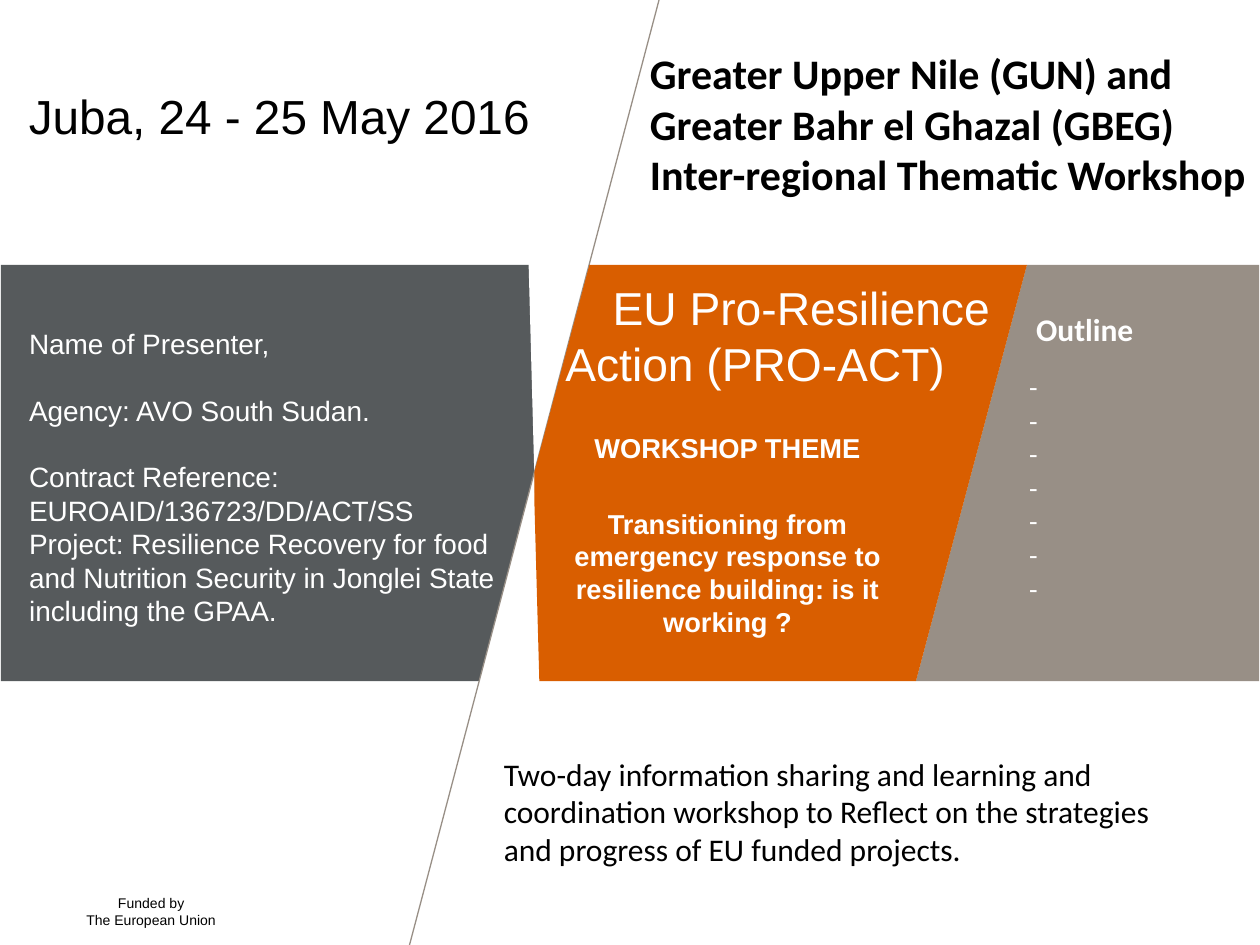
from pptx import Presentation
from pptx.dml.color import RGBColor
from pptx.enum.shapes import MSO_CONNECTOR, MSO_SHAPE
from pptx.enum.text import MSO_ANCHOR, MSO_AUTO_SIZE, PP_ALIGN
from pptx.oxml.ns import qn
from pptx.util import Pt
from lxml import etree

WHITE = RGBColor(0xFF, 0xFF, 0xFF)
BLACK = RGBColor(0, 0, 0)
SLATE = RGBColor(0x56, 0x5A, 0x5C)
ORANGE = RGBColor(0xD9, 0x5E, 0x00)
TAUPE = RGBColor(0x98, 0x8F, 0x86)

LEFT, CENTER = PP_ALIGN.LEFT, PP_ALIGN.CENTER
TOP, MIDDLE = MSO_ANCHOR.TOP, MSO_ANCHOR.MIDDLE
RECTANGLE = MSO_SHAPE.RECTANGLE
STRAIGHT = MSO_CONNECTOR.STRAIGHT
NO_AUTOFIT = MSO_AUTO_SIZE.NONE

# Slide size, the coloured band and the point where the slanted line crosses it
WIDTH, HEIGHT = 720, 540
BAND_TOP, BAND_BOTTOM = 151.4, 389.2
CROSS_X, CROSS_Y = 305.3, 270
LINE_TOP, LINE_BOTTOM = 376.6, 234


def paint(shape, color):
    shape.shadow.inherit = False
    shape.fill.solid()
    shape.fill.fore_color.rgb = color
    shape.line.fill.background()


def add_polygon(slide, points, color):
    (start_x, start_y), *others = [(Pt(x), Pt(y)) for x, y in points]
    builder = slide.shapes.build_freeform(start_x, start_y)
    builder.add_line_segments(others, close=True)
    paint(builder.convert_to_shape(), color)


def add_line(slide, start, end, color):
    line = slide.shapes.add_connector(STRAIGHT, *(Pt(v) for v in start + end))
    line.line.color.rgb = color
    line.line.width = Pt(0.75)
    etree.SubElement(line.element.spPr, qn("a:effectLst"))


def place(shape, left, top, width, height):
    shape.left, shape.top = Pt(left), Pt(top)
    shape.width, shape.height = Pt(width), Pt(height)


def write_text(shape, lines, size, color=BLACK, font="Arial", bold=False,
               align=LEFT, anchor=TOP, spacing=None, gaps=None, indent=0,
               inset_x=7.2, inset_top=3.6):
    """Write one paragraph a line; gaps maps a line index to its space before."""
    frame = shape.text_frame
    frame.auto_size = NO_AUTOFIT
    frame.word_wrap = True
    frame.vertical_anchor = anchor
    frame.margin_left = frame.margin_right = Pt(inset_x)
    frame.margin_top, frame.margin_bottom = Pt(inset_top), Pt(min(inset_top, 3.6))
    for index, line in enumerate(lines):
        paragraph = frame.add_paragraph() if index else frame.paragraphs[0]
        paragraph.alignment = align
        paragraph.space_before = Pt((gaps or {}).get(index, 0))
        if spacing:
            paragraph.line_spacing = Pt(spacing)
        if indent and index == 0:
            paragraph._p.get_or_add_pPr().set("indent", str(Pt(indent)))
        run = paragraph.add_run()
        run.text = line
        run.font.name, run.font.size = font, Pt(size)
        run.font.bold = bold
        run.font.color.rgb = color


def add_text(slide, box, lines, size, **text_format):
    shape = slide.shapes.add_textbox(*(Pt(value) for value in box))
    write_text(shape, lines, size, **text_format)
    return shape


def add_background(slide):
    # Dark panel, cut by a white double wedge along the slanted line
    panel = slide.shapes.add_shape(RECTANGLE, 0, 0, 0, 0)
    place(panel, 0.5, BAND_TOP, CROSS_X - 0.5, BAND_BOTTOM - BAND_TOP)
    paint(panel, SLATE)
    cross = (CROSS_X, CROSS_Y)
    add_polygon(slide, [(298, 0), cross, (LINE_BOTTOM, HEIGHT), (311.8, HEIGHT),
                        cross, (LINE_TOP, 0)], WHITE)
    add_line(slide, (LINE_TOP, 0), (LINE_BOTTOM, HEIGHT), TAUPE)

    # Outline panel and theme panel share one slanted edge
    shared_top, shared_bottom = (586.8, BAND_TOP), (523.4, BAND_BOTTOM)
    add_polygon(slide, [shared_bottom, (719.5, BAND_BOTTOM), (719.5, BAND_TOP),
                        shared_top], TAUPE)
    add_polygon(slide, [cross, (CROSS_X, 284.4), (308.2, BAND_BOTTOM),
                        shared_bottom, shared_top, (336.8, BAND_TOP)], ORANGE)


def add_presenter(slide):
    title = slide.shapes.title
    title.element.getparent().append(title.element)  # bring to the front
    place(title, 9.4, 149.8, 296, 217)
    write_text(title, ["Name of Presenter,", "Agency: AVO South Sudan.",
                       "Contract Reference: EUROAID/136723/DD/ACT/SS",
                       "Project: Resilience Recovery for food and Nutrition "
                       "Security in Jonglei State including the GPAA."],
               16, color=WHITE, spacing=19.1, gaps={1: 19.1, 2: 19.1},
               inset_top=36.7)


def main():
    presentation = Presentation()
    presentation.slide_width, presentation.slide_height = Pt(WIDTH), Pt(HEIGHT)
    slide = presentation.slides.add_slide(presentation.slide_layouts[5])

    add_background(slide)
    add_presenter(slide)

    # Heading: date and workshop name
    add_text(slide, (9.4, 13, 347, 106), ["Juba, 24 - 25 May 2016"], 27.3,
             anchor=MIDDLE)
    add_text(slide, (364.3, 23.8, 360, 94.3),
             ["Greater Upper Nile (GUN) and Greater Bahr el Ghazal (GBEG)",
              "Inter-regional Thematic Workshop"],
             24, font="Calibri", bold=True)

    # Theme panel
    add_text(slide, (316, 151.5, 279.4, 80), ["EU Pro-Resilience Action (PRO-ACT)"],
             26.4, color=WHITE, anchor=MIDDLE, spacing=32, indent=27)
    add_text(slide, (307.4, 231, 216.7, 160.6),
             ["WORKSHOP THEME", "Transitioning from emergency response to "
              "resilience building: is it working ?"],
             15.6, color=WHITE, bold=True, align=CENTER, spacing=18.7,
             gaps={1: 24.7}, inset_top=15.2)

    # Outline panel
    outline_format = dict(color=WHITE, font="Calibri")
    add_text(slide, (581, 173.5, 139, 30), ["Outline"], 18, bold=True, indent=4,
             **outline_format)
    add_text(slide, (581, 207.7, 139, 143), ["-"] * 7, 16, spacing=19.2,
             **outline_format)

    # Foot: purpose and funder
    add_text(slide, (280.8, 427.7, 408.2, 94.3),
             ["Two-day information sharing and learning and coordination workshop "
              "to Reflect on the strategies and progress of EU funded projects."],
             18, font="Calibri")
    add_text(slide, (37.4, 511.2, 98, 26), ["Funded by", "The European Union"], 8,
             align=CENTER, inset_x=0, inset_top=0)

    presentation.save("out.pptx")


if __name__ == "__main__":
    main()
